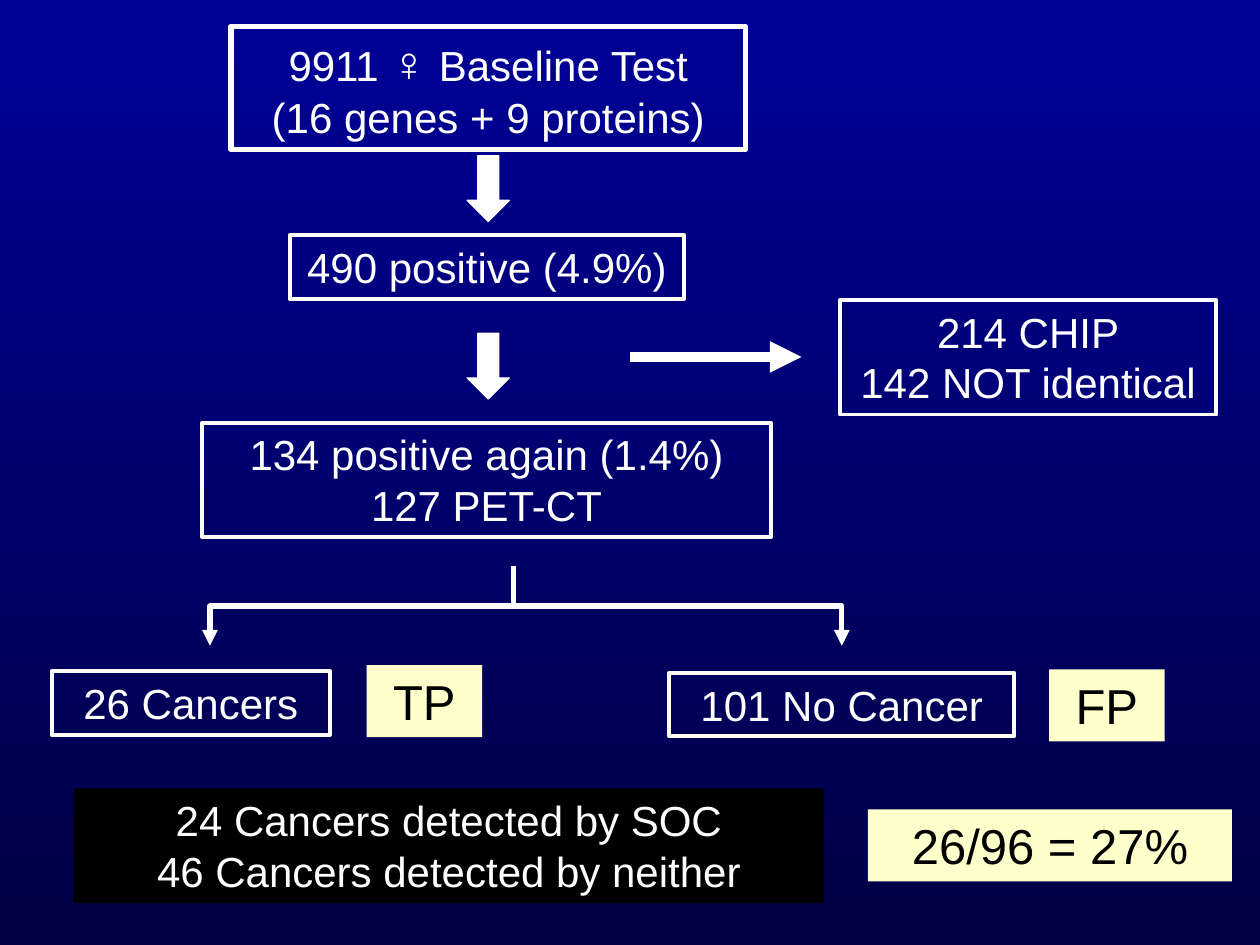
from pptx import Presentation
from pptx.dml.color import RGBColor
from pptx.enum import shapes, text
from pptx.oxml import ns
from pptx.util import Pt
from lxml import etree

WHITE = RGBColor(0xFF, 0xFF, 0xFF)
BLACK = RGBColor(0, 0, 0)
CREAM = RGBColor(0xFF, 0xFF, 0xCC)
NAVY = RGBColor(0, 0, 0x99)
DEEP = RGBColor(0, 0, 0x44)
KIND = shapes.MSO_SHAPE
LINK = shapes.MSO_CONNECTOR


def backdrop(slide):
    fill = slide.background.fill
    fill.gradient()
    fill.gradient_angle = 270
    for stop, color in zip(fill.gradient_stops, (NAVY, DEEP)):
        stop.color.rgb = color


def box(slide, x, y, w, h, lines, edge=2.25, fill=None, ink=WHITE, size=24):
    shape = slide.shapes.add_shape(KIND.RECTANGLE, Pt(x), Pt(y), Pt(w), Pt(h))
    shape.shadow.inherit = False
    if fill is None:
        shape.fill.background()
    else:
        shape.fill.solid()
        shape.fill.fore_color.rgb = fill
    if edge:
        shape.line.color.rgb = WHITE
        shape.line.width = Pt(edge)
    else:
        shape.line.fill.background()
    frame = shape.text_frame
    frame.word_wrap = True
    frame.vertical_anchor = text.MSO_ANCHOR.TOP
    frame.text = "\n".join(lines)
    for para in frame.paragraphs:
        para.alignment = text.PP_ALIGN.CENTER
        para.font.name = "Arial"
        para.font.size = Pt(size)
        para.font.color.rgb = ink
    return shape


def tag(slide, x, y, w, label):
    box(slide, x, y, w, 41.2, [label], edge=0, fill=CREAM, ink=BLACK, size=28)


def drop(slide, x, y):
    arrow = slide.shapes.add_shape(KIND.DOWN_ARROW, Pt(x - 12), Pt(y), Pt(24), Pt(37.5))
    arrow.shadow.inherit = False
    arrow.fill.solid()
    arrow.fill.fore_color.rgb = WHITE
    arrow.line.color.rgb = WHITE
    arrow.line.width = Pt(0.75)


def link(slide, kind, x1, y1, x2, y2, width):
    line = slide.shapes.add_connector(kind, Pt(x1), Pt(y1), Pt(x2), Pt(y2))
    line.line.color.rgb = WHITE
    line.line.width = Pt(width)
    props = line._element.spPr
    tail = etree.SubElement(props.find(ns.qn("a:ln")), ns.qn("a:tailEnd"))
    tail.set("type", "triangle")
    etree.SubElement(props, ns.qn("a:effectLst"))
    return line


def bend(slide, x, y, dx, dy):
    mid, half = x + dx / 2, dy / 2
    top, low = y + half - abs(dx) / 2, y + half + abs(dx) / 2
    side = half if dx > 0 else -half
    line = link(slide, LINK.ELBOW, mid + side, top, mid - side, low, 3)
    turn = 270 if dx > 0 else 90
    line._element.spPr.find(ns.qn("a:xfrm")).set("rot", str(turn * 60000))


def funnel(slide, x, y):
    first = box(slide, x - 147, y, 294, 70.5, ["", "(16 genes + 9 proteins)"], edge=3)
    head = first.text_frame.paragraphs[0]
    for part in ("9911 ", "♀", " Baseline Test"):
        run = head.add_run()
        run.text = part
        if part == "♀":
            run.font.size = Pt(28)
            run.font.bold = True
    drop(slide, x, y + 74)
    box(slide, x - 113.5, y + 119.5, 225.5, 36.4, ["490 positive (4.9%)"])
    drop(slide, x, y + 175.5)
    box(slide, x - 163.5, y + 226.5, 325, 65.4,
        ["134 positive again (1.4%)", "127 PET-CT"])


def aside(slide, x, y):
    link(slide, LINK.STRAIGHT, x, y + 32.5, x + 98, y + 32.5, 6)
    box(slide, x + 120, y, 215, 65.4, ["214 CHIP", "142 NOT identical"])


def split(slide, x, y):
    bend(slide, x, y, 187.5, 45.5)
    bend(slide, x, y, -173.5, 45.5)
    box(slide, x - 264, y + 60, 159, 36.4, ["26 Cancers"])
    tag(slide, x - 84, y + 56.5, 66, "TP")
    box(slide, x + 89, y + 61, 197, 36.4, ["101 No Cancer"])
    tag(slide, x + 306, y + 59, 66, "FP")


def total(slide, x, y):
    box(slide, x, y, 429, 65.4,
        ["24 Cancers detected by SOC", "46 Cancers detected by neither"],
        edge=0, fill=BLACK)
    tag(slide, x + 454, y + 12, 208, "26/96 = 27%")


def main():
    deck = Presentation()
    deck.slide_width, deck.slide_height = Pt(720), Pt(540)
    slide = deck.slides.add_slide(deck.slide_layouts[6])
    backdrop(slide)
    funnel(slide, 279, 15)
    aside(slide, 360, 171.5)
    split(slide, 293.5, 323.5)
    total(slide, 42, 450.5)
    deck.save("out.pptx")


if __name__ == "__main__":
    main()
